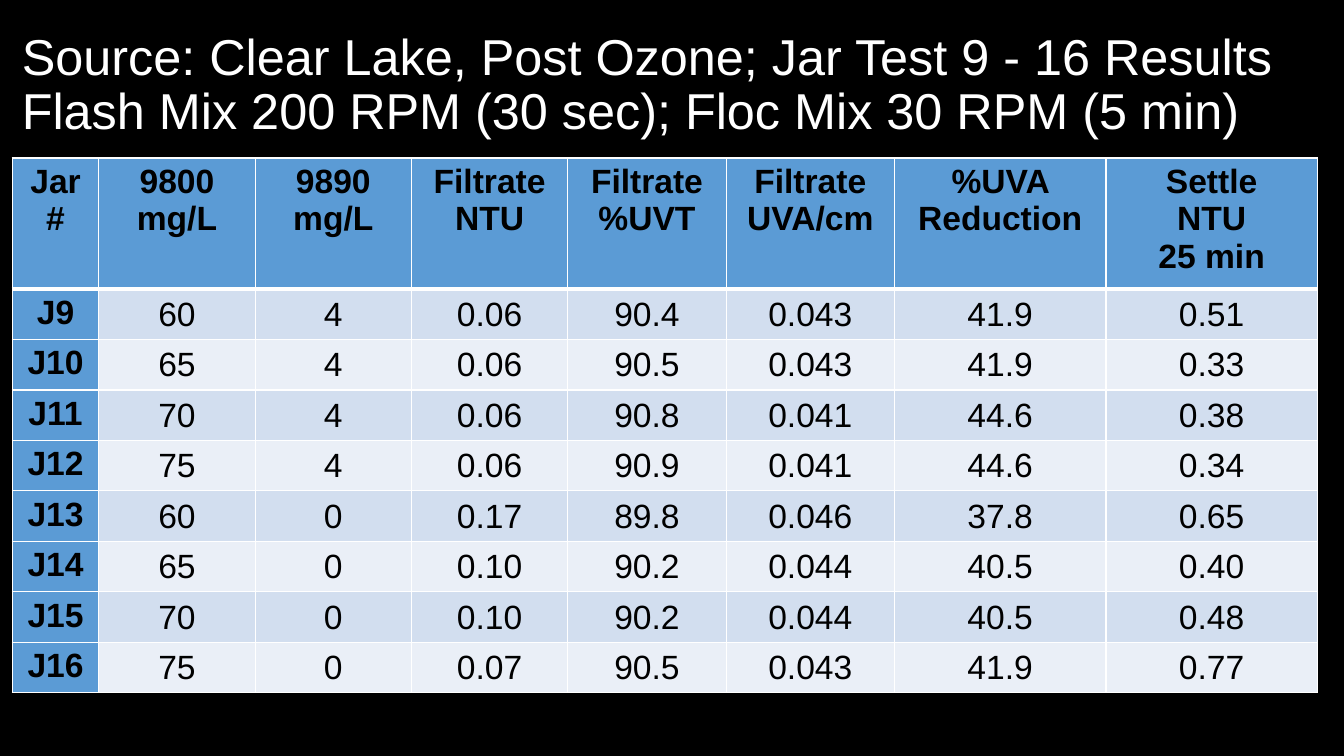
from pptx import Presentation
from pptx.dml.color import RGBColor
from pptx.enum.text import MSO_ANCHOR, PP_ALIGN
from pptx.oxml import parse_xml
from pptx.oxml.ns import nsdecls
from pptx.util import Cm, Pt


def rgb(color):
    return RGBColor.from_string(color)


def write(tf, text, size=24, color="000000", bold=False, align=PP_ALIGN.CENTER, spacing=None):
    """Each newline starts a paragraph; a vertical tab is a line break."""
    for i, line in enumerate(text.split("\n")):
        p = tf.add_paragraph() if i else tf.paragraphs[0]
        p.text = line
        p.alignment = align
        p.line_spacing = spacing
        for r in p.runs:
            r.font.name = "Arial"
            r.font.size = Pt(size)
            r.font.bold = bold
            r.font.color.rgb = rgb(color)


prs = Presentation()
prs.slide_width, prs.slide_height = Cm(33.87), Cm(19.05)
s = prs.slides.add_slide(prs.slide_layouts[6])
s.background.fill.solid()
s.background.fill.fore_color.rgb = rgb("000000")

# Title
sp = s.shapes.add_textbox(Cm(0.3), Cm(0.33), Cm(33.1), Cm(3.68))
tf = sp.text_frame
tf.word_wrap = True
tf.vertical_anchor = MSO_ANCHOR.MIDDLE
write(tf, "Source: Clear Lake, Post Ozone; Jar Test 9 - 16 Results\v"
          "Flash Mix 200 RPM (30 sec); Floc Mix 30 RPM (5 min)",
      size=36, color="FFFFFF", align=PP_ALIGN.LEFT, spacing=0.9)

# Jar test results
rows = [
    ["Jar#", "9800\nmg/L", "9890\nmg/L", "Filtrate\nNTU", "Filtrate\n%UVT",
     "Filtrate\nUVA/cm", "%UVA Reduction", "Settle\nNTU\n25 min"],
    ["J9", "60", "4", "0.06", "90.4", "0.043", "41.9", "0.51"],
    ["J10", "65", "4", "0.06", "90.5", "0.043", "41.9", "0.33"],
    ["J11", "70", "4", "0.06", "90.8", "0.041", "44.6", "0.38"],
    ["J12", "75", "4", "0.06", "90.9", "0.041", "44.6", "0.34"],
    ["J13", "60", "0", "0.17", "89.8", "0.046", "37.8", "0.65"],
    ["J14", "65", "0", "0.10", "90.2", "0.044", "40.5", "0.40"],
    ["J15", "70", "0", "0.10", "90.2", "0.044", "40.5", "0.48"],
    ["J16", "75", "0", "0.07", "90.5", "0.043", "41.9", "0.77"],
]
widths = [2.18, 3.94, 3.94, 3.94, 3.99, 4.24, 5.33, 5.33]
header_height, row_height = 3.1, 1.2
table = s.shapes.add_table(len(rows), len(widths), Cm(0.31), Cm(3.98), Cm(sum(widths)),
                           Cm(header_height + row_height * (len(rows) - 1))).table
for column, width in zip(table.columns, widths):
    column.width = Cm(width)

for i, row in enumerate(rows):
    table.rows[i].height = Cm(row_height if i else header_height)
    for j, text in enumerate(row):
        cell = table.cell(i, j)
        heading = i == 0 or j == 0
        write(cell.text_frame, text, bold=heading)
        if not heading:
            cell.vertical_anchor = MSO_ANCHOR.MIDDLE
            cell.margin_left = cell.margin_top = cell.margin_right = Cm(0.03)
            cell.margin_bottom = 0

        # White borders, thicker under the header; they go before the fill
        tcPr = cell._tc.get_or_add_tcPr()
        for side in ("lnL", "lnR", "lnT", "lnB"):
            under_header = (i, side) in ((0, "lnB"), (1, "lnT"))
            tcPr.append(parse_xml(
                f'<a:{side} {nsdecls("a")} w="{Pt(3 if under_header else 1)}">'
                f'<a:solidFill><a:srgbClr val="FFFFFF"/></a:solidFill></a:{side}>'))
        cell.fill.solid()
        cell.fill.fore_color.rgb = rgb("5B9BD5" if heading else "D2DEEF" if i % 2 else "EAEFF7")

prs.save("out.pptx")
